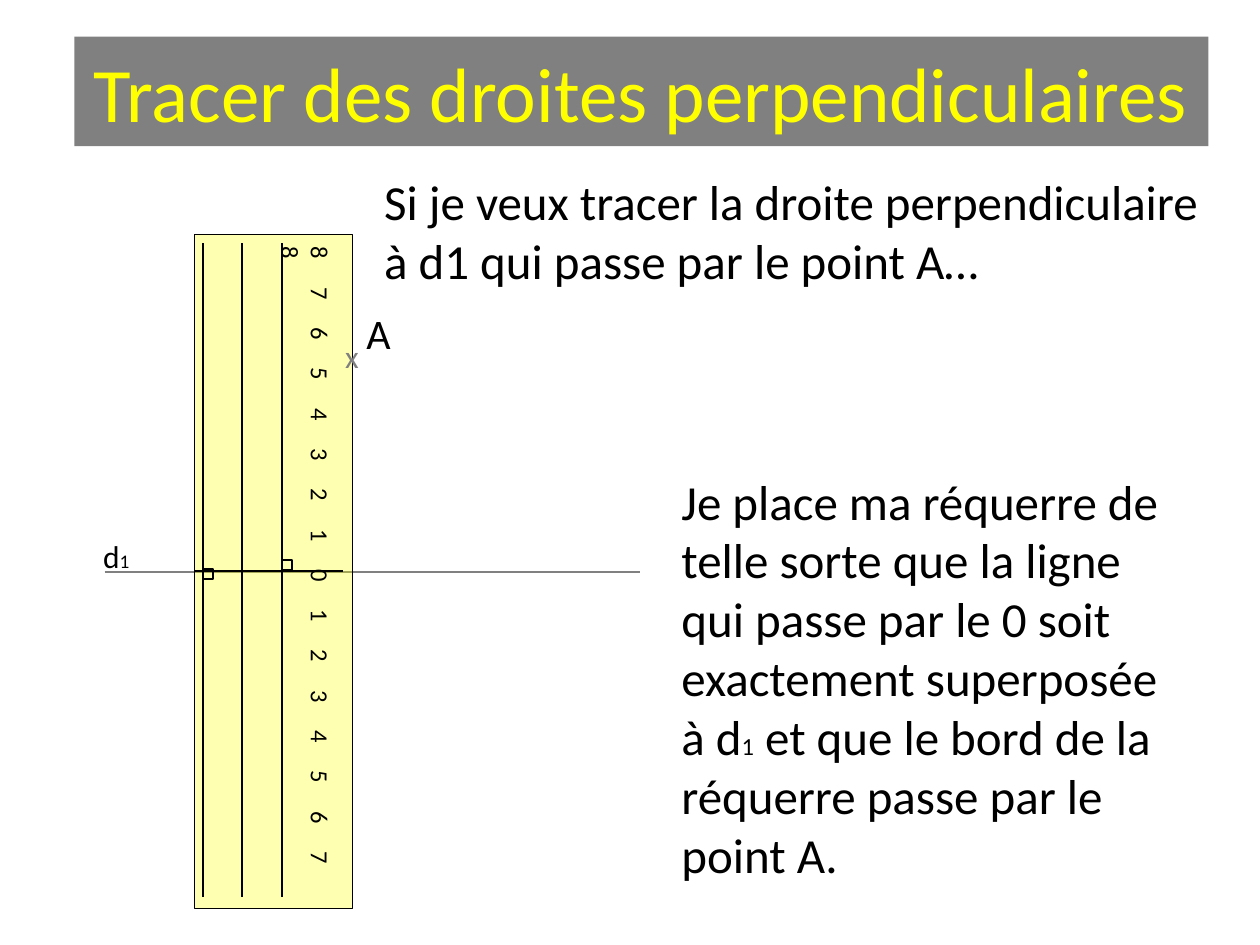
from lxml.etree import SubElement as Sub
from pptx import Presentation as Deck
from pptx.dml.color import RGBColor as Rgb
from pptx.enum.shapes import MSO_CONNECTOR as Conn, MSO_SHAPE as Kind
from pptx.enum.text import MSO_ANCHOR as Anchor, MSO_AUTO_SIZE as Fit, PP_ALIGN as Align
from pptx.oxml.ns import qn
from pptx.util import Inches, Pt


def paint(fmt, color):
    fmt.solid()
    fmt.fore_color.rgb = Rgb.from_string(color)


def write(par, text, size=28, color="000000"):
    run = par.add_run()
    run.text = text
    run.font.size = Pt(size)
    run.font.name = "Calibri"
    paint(run.font.fill, color)


def frame(shapes, x, y, w, h, fit=Fit.SHAPE_TO_FIT_TEXT):
    box = shapes.add_textbox(Inches(x), Inches(y), Inches(w), Inches(h))
    box.text_frame.word_wrap = True
    box.text_frame.auto_size = fit
    return box


def rule(shapes, x1, y1, x2, y2, color="000000", width=1):
    line = shapes.add_connector(
        Conn.STRAIGHT, Inches(x1), Inches(y1), Inches(x2), Inches(y2))
    paint(line.line.fill, color)
    line.line.width = Pt(width)
    Sub(line._element.spPr, qn("a:effectLst"))
    return line


def block(shapes, x, y, w, h, width=1):
    rect = shapes.add_shape(
        Kind.RECTANGLE, Inches(x), Inches(y), Inches(w), Inches(h))
    rect.shadow.inherit = False
    rect.fill.background()
    paint(rect.line.fill, "000000")
    rect.line.width = Pt(width)
    return rect


def scale(shapes, x, y, w, h):
    step = 0.32
    box = frame(shapes, x + (w - h) / 2, y + (h - w) / 2, h, w, Fit.NONE)
    box.rotation = 90
    par = box.text_frame.paragraphs[0]
    marks = [str(abs(n)) for n in range(-8, 8)]
    write(par, "\t".join(marks), size=14)
    par.add_line_break()
    write(par, "8", size=14)
    tabs = Sub(par._p.get_or_add_pPr(), qn("a:tabLst"))
    for n in range(1, len(marks)):
        Sub(tabs, qn("a:tab"), pos=str(Inches(n * step)), algn="l")


def ruler(shapes, x, y, w, h):
    group = shapes.add_group_shape().shapes
    mid = y + h / 2
    body = block(group, x, y, w, h, width=0.25)
    paint(body.fill, "FFFF00")
    tint = body._element.spPr.find(qn("a:solidFill"))[0]
    Sub(tint, qn("a:alpha"), val="30000")
    scale(group, x + 0.83, y, 0.34, h)
    zero = rule(group, x + 1.18, mid, x, mid)
    zero.end_connect(body, 1)
    for dx in (0.7, 0.38, 0.07):
        rule(group, x + dx, y + 0.07, x + dx, y + h - 0.09)
    for dx, dy in ((0.7, -0.09), (0.07, -0.02)):
        block(group, x + dx, mid + dy, 0.08, 0.08)


def head(slide, x, y, w, h):
    title = slide.shapes.title
    title.left, title.top = Inches(x), Inches(y)
    title.width, title.height = Inches(w), Inches(h)
    paint(title.fill, "808080")
    title.text_frame.vertical_anchor = Anchor.MIDDLE
    par = title.text_frame.paragraphs[0]
    par.alignment = Align.CENTER
    write(par, "Tracer des droites perpendiculaires", size=44, color="FFFF00")


def note(shapes, x, y, w, h, *runs):
    par = frame(shapes, x, y, w, h).text_frame.paragraphs[0]
    for text, size in runs:
        write(par, text, size=size)


def point(shapes, x, y, w, h):
    text = frame(shapes, x, y, w, h).text_frame
    name, cross = text.paragraphs[0], text.add_paragraph()
    for par in (name, cross):
        par.line_spacing = Pt(10)
    name._p.get_or_add_pPr().set("marL", str(Inches(0.17)))
    write(name, "A", size=24)
    write(cross, "x", size=18, color="808080")


def main():
    deck = Deck()
    deck.slide_width, deck.slide_height = Inches(10), Inches(7.5)
    slide = deck.slides.add_slide(deck.slide_layouts[5])
    shapes = slide.shapes
    head(slide, 0.59, 0.29, 9, 0.87)
    rule(shapes, 0.83, 4.54, 5.08, 4.54, color="808080", width=1.5)
    ruler(shapes, 1.54, 1.86, 1.26, 5.35)
    note(shapes, 5.31, 3.69, 4.02, 3.4,
         ("Je place ma réquerre de telle sorte que la ligne qui passe "
          "par le 0 soit exactement superposée à d", 28),
         ("1", 14),
         (" et que le bord de la réquerre passe par le point A.", 28))
    note(shapes, 0.72, 4.21, 0.62, 0.4, ("d", 18), ("1", 11))
    note(shapes, 2.95, 1.31, 6.85, 1.04,
         ("Si je veux tracer la droite perpendiculaire à d1 "
          "qui passe par le point A…", 28))
    point(shapes, 2.64, 2.65, 0.94, 0.38)
    deck.save("out.pptx")


if __name__ == "__main__":
    main()
